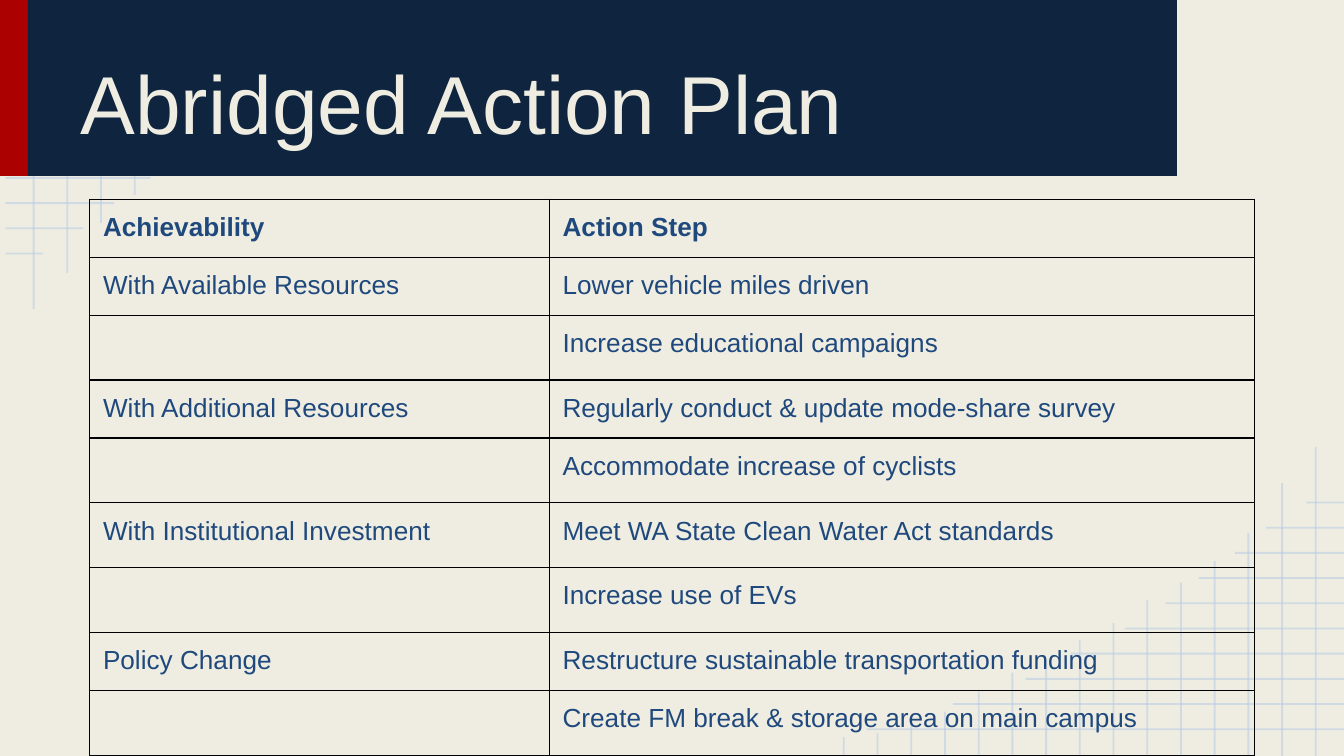
from lxml import etree
from pptx import Presentation
from pptx.dml.color import RGBColor
from pptx.enum.shapes import MSO_CONNECTOR, MSO_SHAPE
from pptx.enum.text import MSO_ANCHOR, MSO_AUTO_SIZE, PP_ALIGN
from pptx.oxml import parse_xml
from pptx.oxml.ns import nsdecls, qn
from pptx.util import Pt

STRAIGHT = MSO_CONNECTOR.STRAIGHT
RECTANGLE = MSO_SHAPE.RECTANGLE
BOTTOM = MSO_ANCHOR.BOTTOM
TOP = MSO_ANCHOR.TOP
LEFT = PP_ALIGN.LEFT
NO_AUTOFIT = MSO_AUTO_SIZE.NONE

CREAM = RGBColor(0xEF, 0xED, 0xE2)
NAVY = RGBColor(0x0F, 0x24, 0x3E)
RED = RGBColor(0xAB, 0x01, 0x01)
BLUE = RGBColor(0x1F, 0x49, 0x7D)
PALE_BLUE = RGBColor(0xB7, 0xCC, 0xE4)
BLACK = RGBColor(0, 0, 0)

WIDTH, HEIGHT = 720, 405
GRID_LEFT = 2.9
ROW_START, ROW_STEP = 14.3, 13.5
COLUMN_START, COLUMN_STEP = 18, 18.06
ROW_ENDS = [258.5, 212.4, 173.5, 149, 120.2, 98.6, 80.6, 61.2, 44.6, 23]
COLUMN_ENDS = [165.6, 146.2, 119.5, 104.4, 92.9, 83.5, 71.3, 61.9,
               51.8, 44.6, 34.6, 23.8, 17.3, 12.2, 10.1]

SHORT_ROW, TALL_ROW = 31.1, 34.7
ACTION_PLAN = [
    ("Achievability", "Action Step", SHORT_ROW),
    ("With Available Resources", "Lower vehicle miles driven", SHORT_ROW),
    ("", "Increase educational campaigns", TALL_ROW),
    ("With Additional Resources",
     "Regularly conduct & update mode-share survey", SHORT_ROW),
    ("", "Accommodate increase of cyclists", TALL_ROW),
    ("With Institutional Investment",
     "Meet WA State Clean Water Act standards", TALL_ROW),
    ("", "Increase use of EVs", TALL_ROW),
    ("Policy Change",
     "Restructure sustainable transportation funding", SHORT_ROW),
    ("", "Create FM break & storage area on main campus", TALL_ROW),
]


class SlideBuilder:
    font_name = "Arial"
    inset = Pt(7.2)

    def __init__(self, slide):
        self.slide = slide
        slide.background.fill.solid()
        slide.background.fill.fore_color.rgb = CREAM

    def style_font(self, font, size, color, bold=False):
        font.name = self.font_name
        font.size = Pt(size)
        font.color.rgb = color
        font.bold = bold

    def set_insets(self, target):
        target.margin_left = target.margin_right = self.inset
        target.margin_top = target.margin_bottom = self.inset

    def line(self, x1, y1, x2, y2):
        connector = self.slide.shapes.add_connector(
            STRAIGHT, Pt(x1), Pt(y1), Pt(x2), Pt(y2))
        connector.line.color.rgb = PALE_BLUE
        connector.line.width = Pt(1)
        properties = connector.element.spPr
        color = properties.find(".//" + qn("a:srgbClr"))
        etree.SubElement(color, qn("a:alpha")).set("val", "54000")
        etree.SubElement(properties, qn("a:effectLst"))

    def corner_grid(self, place):
        for index, end in enumerate(ROW_ENDS):
            y = ROW_START + index * ROW_STEP
            self.line(*place(GRID_LEFT, y), *place(end, y))
        for index, end in enumerate(COLUMN_ENDS):
            x = COLUMN_START + index * COLUMN_STEP
            self.line(*place(x, end), *place(x, 0))

    def rectangle(self, left, top, width, height, color):
        shape = self.slide.shapes.add_shape(
            RECTANGLE, Pt(left), Pt(top), Pt(width), Pt(height))
        shape.shadow.inherit = False
        shape.fill.solid()
        shape.fill.fore_color.rgb = color
        shape.line.fill.background()

    def title(self, text, left, top, width, height):
        title = self.slide.shapes.title
        self.slide.shapes.element.append(title.element)
        title.left, title.top = Pt(left), Pt(top)
        title.width, title.height = Pt(width), Pt(height)
        text_frame = title.text_frame
        text_frame.text = text
        text_frame.word_wrap = True
        text_frame.auto_size = NO_AUTOFIT
        text_frame.vertical_anchor = BOTTOM
        self.set_insets(text_frame)
        paragraph = text_frame.paragraphs[0]
        paragraph.alignment = LEFT
        self.style_font(paragraph.runs[0].font, 44, CREAM)

    def border(self, cell):
        properties = cell._tc.get_or_add_tcPr()
        for index, side in enumerate(("lnL", "lnR", "lnT", "lnB")):
            properties.insert(index, parse_xml(
                f'<a:{side} {nsdecls("a")} w="{Pt(0.75)}"><a:solidFill>'
                f'<a:srgbClr val="{BLACK}"/></a:solidFill></a:{side}>'))

    def cell(self, cell, text, bold):
        cell.fill.background()
        cell.vertical_anchor = TOP
        self.set_insets(cell)
        run = cell.text_frame.paragraphs[0].add_run()
        run.text = text
        self.style_font(run.font, 14, BLUE, bold)
        self.border(cell)

    def table(self, rows, left, top, column_widths):
        height = sum(row[-1] for row in rows)
        table = self.slide.shapes.add_table(
            len(rows), len(column_widths), Pt(left), Pt(top),
            Pt(sum(column_widths)), Pt(height)).table
        table.horz_banding = False
        for column, width in zip(table.columns, column_widths):
            column.width = Pt(width)
        for row_index, (*texts, row_height) in enumerate(rows):
            table.rows[row_index].height = Pt(row_height)
            for column_index, text in enumerate(texts):
                self.cell(table.cell(row_index, column_index), text,
                          row_index == 0)


def main():
    presentation = Presentation()
    presentation.slide_width, presentation.slide_height = Pt(WIDTH), Pt(HEIGHT)
    slide = presentation.slides.add_slide(presentation.slide_layouts[5])
    builder = SlideBuilder(slide)
    builder.corner_grid(lambda x, y: (x, y))
    builder.corner_grid(lambda x, y: (WIDTH + GRID_LEFT - x, HEIGHT - y))
    builder.rectangle(0, -0.7, 15, 95, RED)
    builder.rectangle(15, -0.7, 615.5, 95, NAVY)
    builder.title("Abridged Action Plan", 36, 8, 576, 80)
    builder.table(ACTION_PLAN, 48, 106.7, [246.2, 378])
    presentation.save("out.pptx")


if __name__ == "__main__":
    main()
